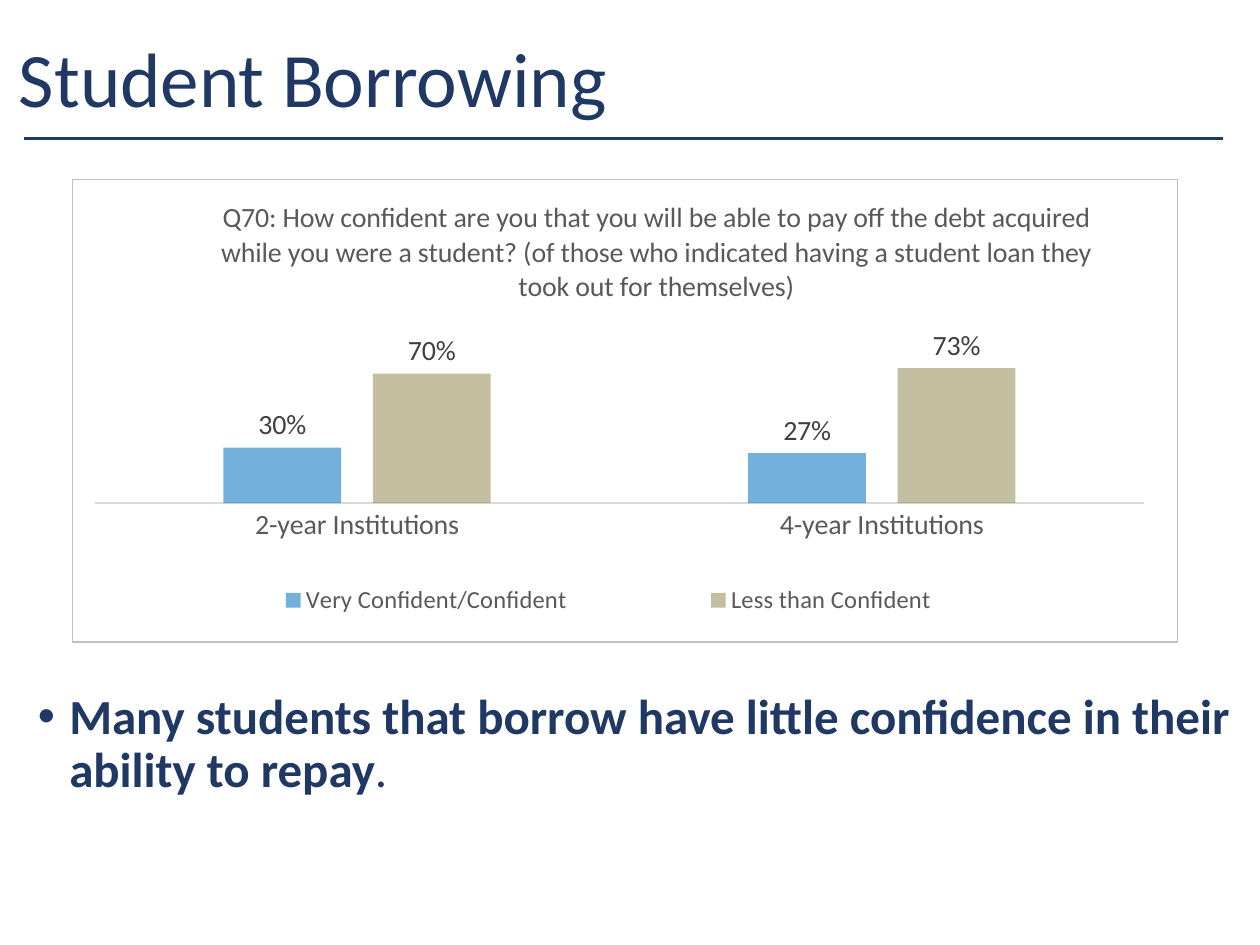
import dataclasses

import lxml.etree
import pptx
import pptx.chart.data
import pptx.dml.color
import pptx.enum.chart
import pptx.enum.shapes
import pptx.enum.text
import pptx.oxml
import pptx.oxml.ns
import pptx.util

COLS, ROWS = 40, 30


@dataclasses.dataclass(frozen=True)
class Theme:
    font: str = "Calibri"
    navy: str = "203864"
    grey: str = "595959"
    dark: str = "404040"
    rule: str = "D9D9D9"
    edge: str = "BFBFBF"
    bars: tuple = ("0070C0", "948A54")
    alpha: int = 55
    head: int = 44
    body: int = 28
    label: int = 16
    key: int = 14


THEME = Theme()
QUESTION = (
    "Q70: How confident are you that you will be able to pay off the debt "
    "acquired while you were a student? (of those who indicated having a "
    "student loan they took out for themselves)"
)
GROUPS = ("2-year Institutions", "4-year Institutions")
SERIES = {"Very Confident/Confident": (30, 27), "Less than Confident": (70, 73)}
POINT = [
    ("Many students that borrow have little confidence in their ability to repay", True),
    (".", False),
]


def rgb(code):
    return pptx.dml.color.RGBColor.from_string(code)


def grid(deck, *cells):
    units = (deck.slide_width / COLS, deck.slide_height / ROWS)
    return [round(cell * units[i % 2]) for i, cell in enumerate(cells)]


def style(font, size, color, bold=False):
    font.name = THEME.font
    font.size = pptx.util.Pt(size)
    font.bold = bold
    font.color.rgb = rgb(color)


def move(shape, box):
    shape.left, shape.top, shape.width, shape.height = box


def write(shape, runs, size):
    frame = shape.text_frame
    frame.word_wrap = True
    frame.auto_size = pptx.enum.text.MSO_AUTO_SIZE.NONE
    para = frame.paragraphs[0]
    para.alignment = pptx.enum.text.PP_ALIGN.LEFT
    para.line_spacing = 0.9
    para.space_before = pptx.util.Pt(0)
    for text, bold in runs:
        run = para.add_run()
        run.text = text
        style(run.font, size, THEME.navy, bold)
    return para


def bullet(para):
    props = para._p.get_or_add_pPr()
    hang = pptx.util.Inches(0.25)
    props.set("marL", str(hang))
    props.set("indent", str(-hang))
    for tag, key, value in (("a:buFont", "typeface", "Arial"), ("a:buChar", "char", "•")):
        lxml.etree.SubElement(props, pptx.oxml.ns.qn(tag)).set(key, value)


def rule(deck, slide, *ends):
    line = slide.shapes.add_connector(
        pptx.enum.shapes.MSO_CONNECTOR.STRAIGHT, *grid(deck, *ends)
    )
    line.line.color.rgb = rgb(THEME.navy)
    line.line.width = pptx.util.Pt(1.75)
    lxml.etree.SubElement(line._element.spPr, pptx.oxml.ns.qn("a:effectLst"))


def layout(node, index, inner=False, **shares):
    for old in node.findall(pptx.oxml.ns.qn("c:layout")):
        node.remove(old)
    target = '<c:layoutTarget val="inner"/>' if inner else ""
    modes = "".join(f'<c:{key}Mode val="edge"/>' for key in "xy")
    sizes = "".join(f'<c:{key} val="{value}"/>' for key, value in shares.items())
    xml = (
        f"<c:layout {pptx.oxml.ns.nsdecls('c')}><c:manualLayout>"
        f"{target}{modes}{sizes}</c:manualLayout></c:layout>"
    )
    node.insert(index, pptx.oxml.parse_xml(xml))


def frame(chart):
    xml = (
        f"<c:spPr {pptx.oxml.ns.nsdecls('c', 'a')}><a:noFill/><a:ln w=\"9525\">"
        f'<a:solidFill><a:srgbClr val="{THEME.edge}"/></a:solidFill></a:ln></c:spPr>'
    )
    chart.element.find(pptx.oxml.ns.qn("c:chart")).addnext(pptx.oxml.parse_xml(xml))


def paint(series, color):
    series.format.fill.solid()
    series.format.fill.fore_color.rgb = rgb(color)
    shade = series._element.find(".//" + pptx.oxml.ns.qn("a:srgbClr"))
    alpha = lxml.etree.SubElement(shade, pptx.oxml.ns.qn("a:alpha"))
    alpha.set("val", str(THEME.alpha * 1000))
    labels = series.data_labels
    labels.show_value = True
    labels.number_format = '0"%"'
    labels.number_format_is_linked = False
    labels.position = pptx.enum.chart.XL_LABEL_POSITION.OUTSIDE_END
    style(labels.font, THEME.label, THEME.dark)


def axes(chart):
    none = pptx.enum.chart.XL_TICK_MARK.NONE
    for axis in (chart.category_axis, chart.value_axis):
        axis.major_tick_mark = axis.minor_tick_mark = none
        axis.has_major_gridlines = False
        style(axis.tick_labels.font, THEME.label, THEME.grey)
    base = chart.category_axis.format.line
    base.color.rgb = rgb(THEME.rule)
    base.width = pptx.util.Pt(0.75)
    scale = chart.value_axis
    scale.minimum_scale, scale.maximum_scale = 0, 80
    scale.tick_label_position = pptx.enum.chart.XL_TICK_LABEL_POSITION.NONE
    scale.format.line.fill.background()


def columns(deck, slide, *box):
    data = pptx.chart.data.CategoryChartData(number_format='0"%"')
    data.categories = GROUPS
    for name, values in SERIES.items():
        data.add_series(name, values)
    kind = pptx.enum.chart.XL_CHART_TYPE.COLUMN_CLUSTERED
    chart = slide.shapes.add_chart(kind, *grid(deck, *box), data).chart
    style(chart.font, THEME.label, THEME.grey)
    frame(chart)
    plot = chart.plots[0]
    plot.gap_width, plot.overlap = 219, -27
    plot.vary_by_categories = False
    for series, color in zip(plot.series, THEME.bars):
        paint(series, color)
    axes(chart)

    chart.has_title = True
    title = chart.chart_title
    run = title.text_frame.paragraphs[0].add_run()
    run.text = QUESTION
    style(run.font, THEME.label, THEME.grey)
    chart.has_legend = True
    legend = chart.legend
    legend.position = pptx.enum.chart.XL_LEGEND_POSITION.BOTTOM
    legend.include_in_layout = False
    style(legend.font, THEME.key, THEME.grey)

    area = chart.element.find(".//" + pptx.oxml.ns.qn("c:plotArea"))
    layout(area, 0, inner=True, x=0.02, y=0.38, w=0.95, h=0.32)
    layout(title._element, 1, x=0.13, y=0.03)
    layout(legend._element, 1, x=0.07, y=0.86, w=0.83, h=0.1)


def main():
    deck = pptx.Presentation()
    deck.slide_width = pptx.util.Inches(10)
    deck.slide_height = pptx.util.Inches(7.5)
    slide = deck.slides.add_slide(deck.slide_layouts[1])
    title, body = slide.placeholders
    rule(deck, slide, 38.84, 4.4, 0.76, 4.4)
    move(title, grid(deck, 0.2, 0.88, 34.48, 3.48))
    title.text_frame.vertical_anchor = pptx.enum.text.MSO_ANCHOR.MIDDLE
    write(title, [("Student Borrowing", False)], THEME.head)
    move(body, grid(deck, 0.8, 21.76, 38.76, 5.52))
    bullet(write(body, POINT, THEME.body))
    columns(deck, slide, 2.28, 5.68, 35.12, 14.72)
    deck.save("out.pptx")


if __name__ == "__main__":
    main()
